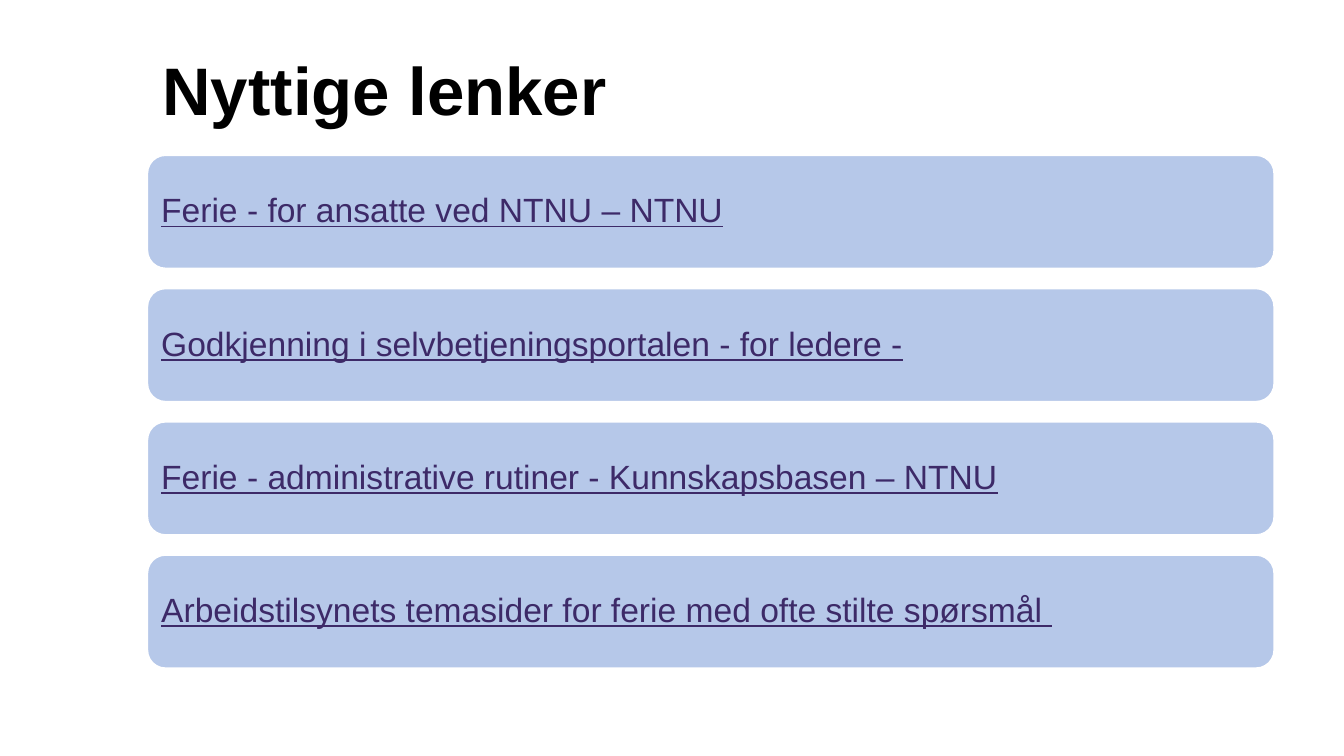
from pptx import Presentation
from pptx.dml.color import RGBColor
from pptx.enum.shapes import MSO_SHAPE
from pptx.enum.text import MSO_ANCHOR, PP_ALIGN
from pptx.util import Pt

ROUNDED = MSO_SHAPE.ROUNDED_RECTANGLE
TOP, MIDDLE = MSO_ANCHOR.TOP, MSO_ANCHOR.MIDDLE
LEFT = PP_ALIGN.LEFT

BLACK, WHITE = "000000", "FFFFFF"
CARD_BLUE, LINK_PURPLE = "B6C8E9", "3D2A68"


def colour(value):
    return RGBColor.from_string(value)


class SlideBuilder:
    """Holds the style and the current slide."""

    font_name = "Arial"

    def __init__(self, slide):
        self.slide = slide

    def text(self, wording, box, ink, anchor, insets, spacing, **font_format):
        frame = self.slide.shapes.add_textbox(*map(Pt, box)).text_frame
        frame.word_wrap = True
        frame.vertical_anchor = anchor
        for side, inset in zip(("left", "top", "right", "bottom"), insets):
            setattr(frame, f"margin_{side}", Pt(inset))
        paragraph = frame.paragraphs[0]
        paragraph.alignment = LEFT
        paragraph.line_spacing = spacing
        run = paragraph.add_run()
        run.text = wording
        run.font.name = self.font_name
        run.font.color.rgb = colour(ink)
        for name, value in font_format.items():
            setattr(run.font, name, value)

    def card(self, box):
        card = self.slide.shapes.add_shape(ROUNDED, *map(Pt, box))
        card.shadow.inherit = False
        card.fill.solid()
        card.fill.fore_color.rgb = colour(CARD_BLUE)
        card.line.color.rgb = colour(WHITE)
        card.line.width = Pt(2)


def main():
    presentation = Presentation()
    presentation.slide_width, presentation.slide_height = Pt(720), Pt(405)
    blank = presentation.slide_layouts[6]
    builder = SlideBuilder(presentation.slides.add_slide(blank))

    # Heading
    builder.text("Nyttige lenker", (82, 18, 583, 67.5), BLACK, TOP,
                 (5, 7.8, 5, 3.6), 1.0, size=Pt(36), bold=True)

    # Link cards, evenly stacked
    links = (
        "Ferie - for ansatte ved NTNU – NTNU",
        "Godkjenning i selvbetjeningsportalen - for ledere -",
        "Ferie - administrative rutiner - Kunnskapsbasen – NTNU",
        "Arbeidstilsynets temasider for ferie med ofte stilte spørsmål ",
    )
    left, first_top, width, height = 78.4, 82.6, 604.8, 61.8
    pitch, padding = 71.4, 3
    for row, link in enumerate(links):
        top = first_top + row * pitch
        builder.card((left, top, width, height))
        label_box = (left + padding, top + padding,
                     width - 2 * padding, height - 2 * padding)
        builder.text(link, label_box, LINK_PURPLE, MIDDLE, (5,) * 4, 0.9,
                     size=Pt(18), underline=True)

    presentation.save("out.pptx")


if __name__ == "__main__":
    main()
